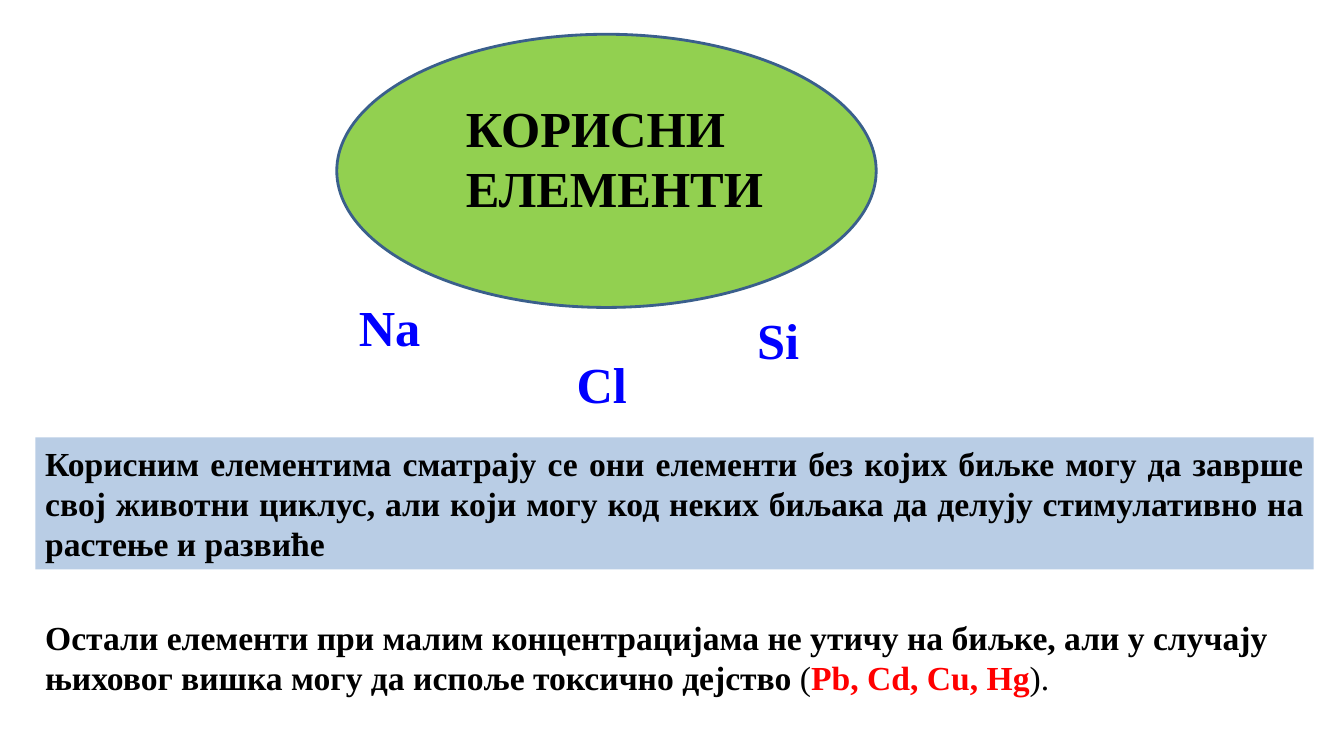
from pptx import Presentation
from pptx.dml.color import RGBColor
from pptx.enum.shapes import MSO_SHAPE
from pptx.enum.text import MSO_ANCHOR, MSO_AUTO_SIZE, PP_ALIGN
from pptx.util import Inches, Pt

OVAL = MSO_SHAPE.OVAL
TOP = MSO_ANCHOR.TOP
NO_FIT = MSO_AUTO_SIZE.NONE
LEFT, JUSTIFY = PP_ALIGN.LEFT, PP_ALIGN.JUSTIFY
TITLE_ONLY = 5
FONT = "Times New Roman"
COLORS = {
    "black": "000000",
    "green": "92D050",
    "outline": "3A5F8C",
    "blue": "0000FF",
    "panel": "B9CDE5",
    "red": "FF0000",
}
ELEMENTS = [
    ("Na", 3.46, 2.89, 0.82),
    ("Cl", 5.62, 3.45, 0.78),
    ("Si", 7.41, 3.02, 0.68),
]
DEFINITION = (
    "Корисним елементима сматрају се они елементи без којих биљке могу да заврше "
    "свој животни циклус, али који могу код неких биљака да делују стимулативно "
    "на растење и развиће"
)
TOXICITY = [
    ("Остали елементи при малим концентрацијама не утичу на биљке, али у случају "
     "њиховог вишка могу да испоље токсично дејство ", "black", True),
    ("(", "black", False),
    ("Pb, Cd, Cu, Hg", "red", True),
    (").", "black", False),
]


def color(name):
    return RGBColor.from_string(COLORS[name])


def inches(*lengths):
    return [Inches(length) for length in lengths]


def style_font(font, size, color_name, bold=True):
    font.name = FONT
    font.size = Pt(size)
    font.bold = bold
    font.color.rgb = color(color_name)


def add_oval(slide, left, top, width, height):
    oval = slide.shapes.add_shape(OVAL, *inches(left, top, width, height))
    oval.shadow.inherit = False
    oval.fill.solid()
    oval.fill.fore_color.rgb = color("green")
    oval.line.color.rgb = color("outline")
    oval.line.width = Pt(2)
    return oval


def place_title(slide, text, oval, left, top, width, height):
    title = slide.shapes.title
    title.left, title.top, title.width, title.height = inches(left, top, width, height)
    frame = title.text_frame
    frame.text = text
    frame.word_wrap = True
    frame.auto_size = NO_FIT
    frame.vertical_anchor = TOP
    heading = frame.paragraphs[0]
    heading.alignment = LEFT
    style_font(heading.font, 36, "black")
    oval._element.addnext(title._element)


def add_text(slide, text, left, top, width, height, size, color_name,
             align=LEFT, fill=None):
    box = slide.shapes.add_textbox(*inches(left, top, width, height))
    if fill:
        box.fill.solid()
        box.fill.fore_color.rgb = color(fill)
    box.text_frame.word_wrap = True
    paragraph = box.text_frame.paragraphs[0]
    paragraph.alignment = align
    if isinstance(text, str):
        paragraph.text = text
        style_font(paragraph.font, size, color_name)
    else:
        for part, part_color, bold in text:
            run = paragraph.add_run()
            run.text = part
            style_font(run.font, size, part_color, bold)


def main():
    presentation = Presentation()
    presentation.slide_width, presentation.slide_height = inches(13.33, 7.5)
    slide = presentation.slides.add_slide(presentation.slide_layouts[TITLE_ONLY])

    oval = add_oval(slide, 3.34, 0.34, 5.35, 2.71)
    place_title(slide, "КОРИСНИ ЕЛЕМЕНТИ", oval, 4.52, 0.91, 3.94, 1.31)
    for symbol, left, top, width in ELEMENTS:
        add_text(slide, symbol, left, top, width, 0.71, 36, "blue")
    add_text(slide, DEFINITION, 0.35, 4.34, 12.68, 1.31, 24, "black", JUSTIFY, "panel")
    add_text(slide, TOXICITY, 0.35, 6.07, 12.68, 0.91, 24, "black")

    presentation.save("out.pptx")


if __name__ == "__main__":
    main()
